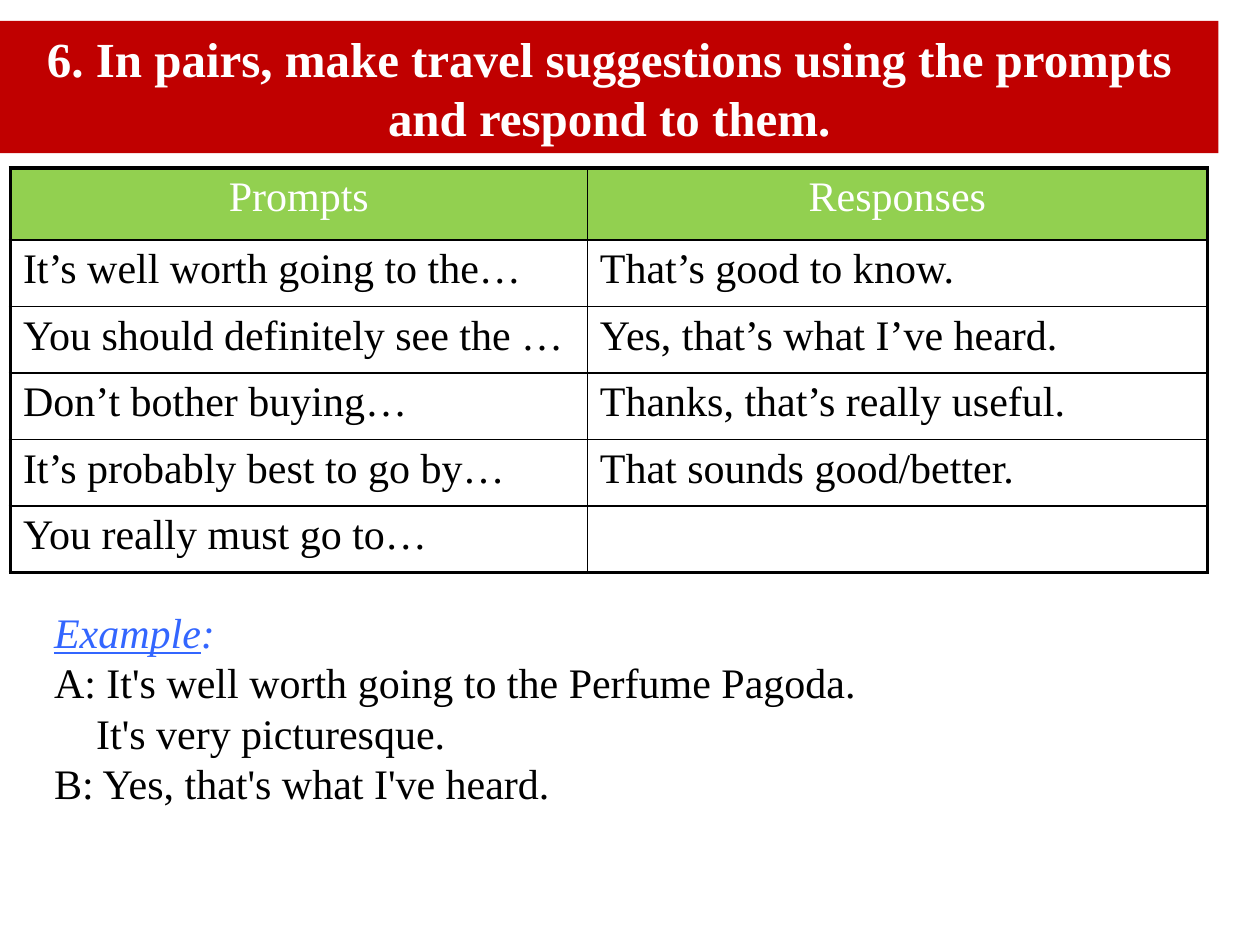
from dataclasses import dataclass

from lxml import etree
from pptx import Presentation
from pptx import util as u
from pptx.dml.color import RGBColor
from pptx.enum import text
from pptx.oxml.ns import qn


@dataclass(frozen=True)
class Theme:
    font: str = "Times New Roman"
    title_size: int = 28
    body_size: int = 24
    banner: str = "C00000"
    header: str = "92D050"
    light: str = "FFFFFF"
    ink: str = "000000"
    accent: str = "3366FF"
    thin: float = 1
    thick: float = 2.25


class LessonPage:
    def __init__(self, deck, theme):
        self.theme = theme
        self.page = deck.slides.add_slide(deck.slide_layouts[5])

    def add_span(self, para, words, color, size=None, **style):
        span = para.add_run()
        span.text = words
        font = span.font
        font.name = self.theme.font
        font.size = u.Pt(size or self.theme.body_size)
        font.color.rgb = RGBColor.from_string(color)
        for name, value in style.items():
            setattr(font, name, value)

    def add_title(self, words, left, top, width, height):
        title = self.page.shapes.title
        title.left, title.top = u.Cm(left), u.Cm(top)
        title.width, title.height = u.Cm(width), u.Cm(height)
        title.fill.solid()
        title.fill.fore_color.rgb = RGBColor.from_string(self.theme.banner)
        frame = title.text_frame
        frame.word_wrap = True
        frame.auto_size = text.MSO_AUTO_SIZE.NONE
        frame.vertical_anchor = text.MSO_ANCHOR.MIDDLE
        para = frame.paragraphs[0]
        para.alignment = text.PP_ALIGN.CENTER
        self.add_span(para, words, self.theme.light, self.theme.title_size, bold=True)

    def add_border(self, cell, side, weight):
        line = etree.SubElement(cell._tc.get_or_add_tcPr(), qn(f"a:ln{side}"), w=str(u.Pt(weight)))
        fill = etree.SubElement(line, qn("a:solidFill"))
        etree.SubElement(fill, qn("a:srgbClr"), val=self.theme.ink)

    def add_table(self, rows, left, top, widths, heights):
        theme = self.theme
        table = self.page.shapes.add_table(
            len(rows), len(widths), u.Cm(left), u.Cm(top), u.Cm(sum(widths)), u.Cm(sum(heights))
        ).table
        table.first_row = table.horz_banding = False
        for column, width in zip(table.columns, widths):
            column.width = u.Cm(width)
        for row, height in zip(table.rows, heights):
            row.height = u.Cm(height)
        last_row, last_column = len(rows) - 1, len(widths) - 1
        for r, row in enumerate(rows):
            for c, words in enumerate(row):
                cell = table.cell(r, c)
                outer = {"L": c == 0, "R": c == last_column, "T": r == 0, "B": r == last_row}
                for side, is_outer in outer.items():
                    self.add_border(cell, side, theme.thick if is_outer else theme.thin)
                para = cell.text_frame.paragraphs[0]
                if r == 0:
                    cell.fill.solid()
                    cell.fill.fore_color.rgb = RGBColor.from_string(theme.header)
                    para.alignment = text.PP_ALIGN.CENTER
                else:
                    cell.fill.background()
                if words:
                    self.add_span(para, words, theme.light if r == 0 else theme.ink)

    def add_example(self, label, lines, left, top, width, height):
        box = self.page.shapes.add_textbox(u.Cm(left), u.Cm(top), u.Cm(width), u.Cm(height))
        frame = box.text_frame
        frame.word_wrap = True
        frame.vertical_anchor = text.MSO_ANCHOR.MIDDLE
        para = frame.paragraphs[0]
        self.add_span(para, label, self.theme.accent, italic=True, underline=True)
        self.add_span(para, ":", self.theme.accent, italic=True)
        for words, indent in lines:
            para = frame.add_paragraph()
            para._p.get_or_add_pPr().set("marL", str(u.Cm(indent)))
            self.add_span(para, words, self.theme.ink)


def main():
    deck = Presentation()
    deck.slide_width, deck.slide_height = u.Cm(25.4), u.Cm(19.05)
    lesson = LessonPage(deck, Theme())
    lesson.add_title(
        "6. In pairs, make travel suggestions using the prompts and respond to them.",
        0, 0.42, 24.56, 2.67,
    )
    lesson.add_example(
        "Example",
        [
            ("A: It's well worth going to the Perfume Pagoda.", 0),
            ("It's very picturesque.", 0.85),
            ("B: Yes, that's what I've heard.", 0),
        ],
        0.84, 12.07, 18.42, 4.37,
    )
    rows = [
        ("Prompts", "Responses"),
        ("It’s well worth going to the…", "That’s good to know."),
        ("You should definitely see the …", "Yes, that’s what I’ve heard."),
        ("Don’t bother buying…", "Thanks, that’s really useful."),
        ("It’s probably best to go by…", "That sounds good/better."),
        ("You really must go to…", ""),
    ]
    lesson.add_table(rows, 0.21, 3.39, [11.63, 12.5], [1.45] + [1.34] * 5)
    deck.save("out.pptx")


if __name__ == "__main__":
    main()
